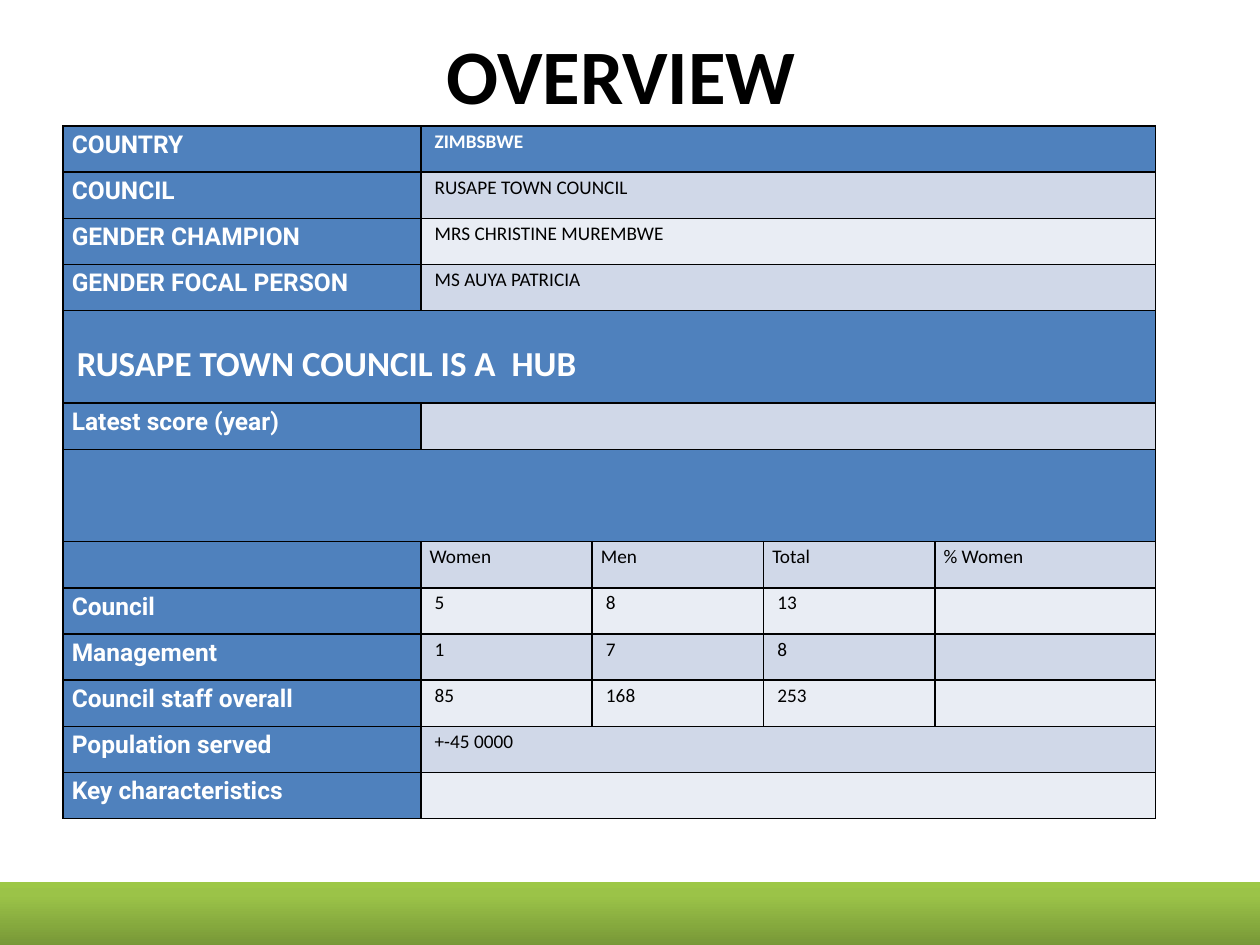
from copy import deepcopy
from dataclasses import dataclass

from lxml import etree
from pptx import Presentation
from pptx import util as u
from pptx.dml.color import RGBColor
from pptx.enum import shapes, text
from pptx.oxml.ns import qn


@dataclass(frozen=True)
class Theme:
    """Colours, fonts and type sizes of the slide."""
    blue: str = "4F81BD"
    tints: tuple = ("E9EDF4", "D0D8E8")
    black: str = "000000"
    white: str = "FFFFFF"
    band: tuple = ((0, "779737"), (0.8, "9BC348"), (1, "9DC746"))
    body: str = "Calibri"
    label: str = "Roboto"
    title: int = 44
    hub: int = 20
    head: int = 14
    value: int = 11


THEME = Theme()
PAD, INDENT = 0.07, 0.11
COLS = (2.84, 1.36, 1.36, 1.36, 1.75)
ROWS = (
    ("COUNTRY", "ZIMBSBWE"),
    ("COUNCIL", "RUSAPE TOWN COUNCIL"),
    ("GENDER CHAMPION", "MRS CHRISTINE MUREMBWE"),
    ("GENDER FOCAL PERSON", "MS AUYA PATRICIA"),
    ("RUSAPE TOWN COUNCIL IS A  HUB",),
    ("Latest score (year)", ""),
    ("",),
    ("", "Women", "Men", "Total", "% Women"),
    ("Council", "5", "8", "13", ""),
    ("Management", "1", "7", "8", ""),
    ("Council staff overall", "85", "168", "253", ""),
    ("Population served", "+-45 0000"),
    ("Key characteristics", ""),
)


def write(para, words, size, font, color, bold):
    """Add one styled run to a paragraph."""
    run = para.add_run()
    run.text = words
    run.font.size = u.Pt(size)
    run.font.name = font
    run.font.bold = bold
    run.font.color.rgb = RGBColor.from_string(color)


def border(cell):
    """Draw a one-point black line on all four sides of a cell."""
    props = cell._tc.get_or_add_tcPr()
    for side in ("lnL", "lnR", "lnT", "lnB"):
        line = etree.SubElement(props, qn(f"a:{side}"), w=str(u.Pt(1)))
        fill = etree.SubElement(line, qn("a:solidFill"))
        etree.SubElement(fill, qn("a:srgbClr"), val=THEME.black)


def dress(cell, words, fill, style, left=PAD, top=0):
    """Fill a cell and set its text and margins."""
    cell.fill.solid()
    cell.fill.fore_color.rgb = RGBColor.from_string(fill)
    cell.margin_left, cell.margin_right = u.Inches(left), u.Inches(PAD)
    cell.margin_top, cell.margin_bottom = u.Inches(top), 0
    if words:
        para = cell.text_frame.paragraphs[0]
        para.line_spacing = 1.15
        write(para, words, *style)


def title(slide, left, top, width, height):
    """Place the centred heading."""
    box = slide.shapes.add_textbox(*map(u.Inches, (left, top, width, height)))
    frame = box.text_frame
    frame.word_wrap = True
    frame.vertical_anchor = text.MSO_ANCHOR.MIDDLE
    para = frame.paragraphs[0]
    para.alignment = text.PP_ALIGN.CENTER
    write(para, "OVERVIEW ", THEME.title, THEME.body, THEME.black, True)


def profile(slide, left, top, width, height):
    """Place the council table, with full-width rows twice as tall."""
    frame = slide.shapes.add_table(
        len(ROWS), len(COLS), *map(u.Inches, (left, top, width, height)))
    table = frame.table
    for col, span in zip(table.columns, COLS):
        col.width = u.Inches(span * width / sum(COLS))
    unit = height / sum(2 if len(row) == 1 else 1 for row in ROWS)
    label = (THEME.head, THEME.label, THEME.white, True)
    hub = (THEME.hub, THEME.body, THEME.white, True)
    first = (THEME.value, THEME.body, THEME.white, True)
    plain = (THEME.value, THEME.body, THEME.black, False)
    last = len(COLS) - 1
    for i, row in enumerate(ROWS):
        wide = len(row) == 1
        table.rows[i].height = u.Inches(unit * (2 if wide else 1))
        for j in range(len(COLS)):
            border(table.cell(i, j))
        if len(row) < len(COLS):
            table.cell(i, len(row) - 1).merge(table.cell(i, last))
        if wide:
            dress(table.cell(i, 0), row[0], THEME.blue, hub, INDENT, 0.21)
            continue
        dress(table.cell(i, 0), row[0], THEME.blue, label)
        tint = THEME.tints[i % 2] if i else THEME.blue
        for j, words in enumerate(row[1:], 1):
            dress(table.cell(i, j), words, tint, plain if i else first,
                  INDENT if row[0] else PAD)


def band(slide, left, top, width, height):
    """Place the green gradient strip at the foot."""
    strip = slide.shapes.add_shape(
        shapes.MSO_SHAPE.RECTANGLE,
        *map(u.Inches, (left, top, width, height)))
    strip.shadow.inherit = False
    strip.line.fill.background()
    strip.fill.gradient()
    strip.fill.gradient_angle = 90
    stops = strip._element.spPr.find(".//" + qn("a:gsLst"))
    stops.append(deepcopy(stops[-1]))
    for stop, (place, color) in zip(strip.fill.gradient_stops, THEME.band):
        stop.position = place
        stop.color.rgb = RGBColor.from_string(color)


def main():
    """Build and save the slide."""
    deck = Presentation()
    deck.slide_width, deck.slide_height = u.Inches(10), u.Inches(7.5)
    slide = deck.slides.add_slide(deck.slide_layouts[6])
    title(slide, 0.5, 0.17, 9, 0.83)
    profile(slide, 0.5, 1, 8.67, 5.5)
    band(slide, 0, 7, 10.21, 0.51)
    deck.save("out.pptx")


if __name__ == "__main__":
    main()
